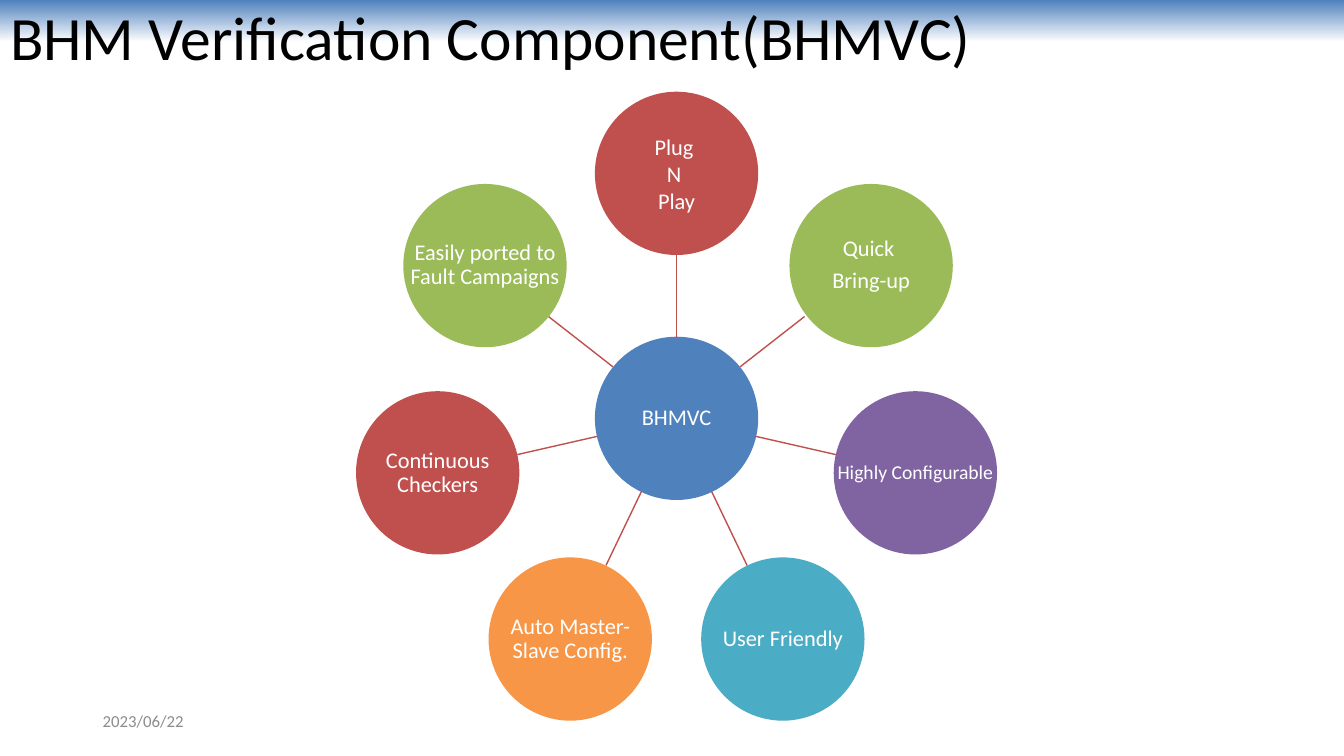
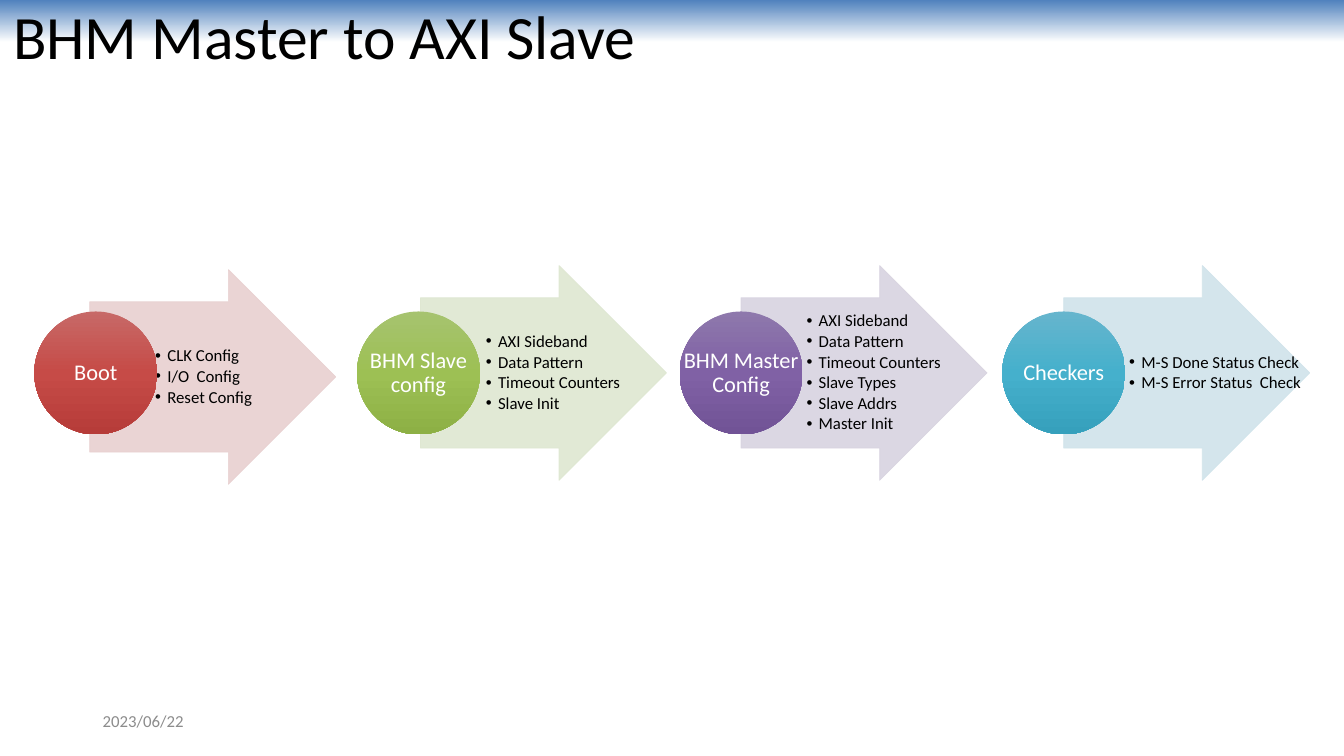
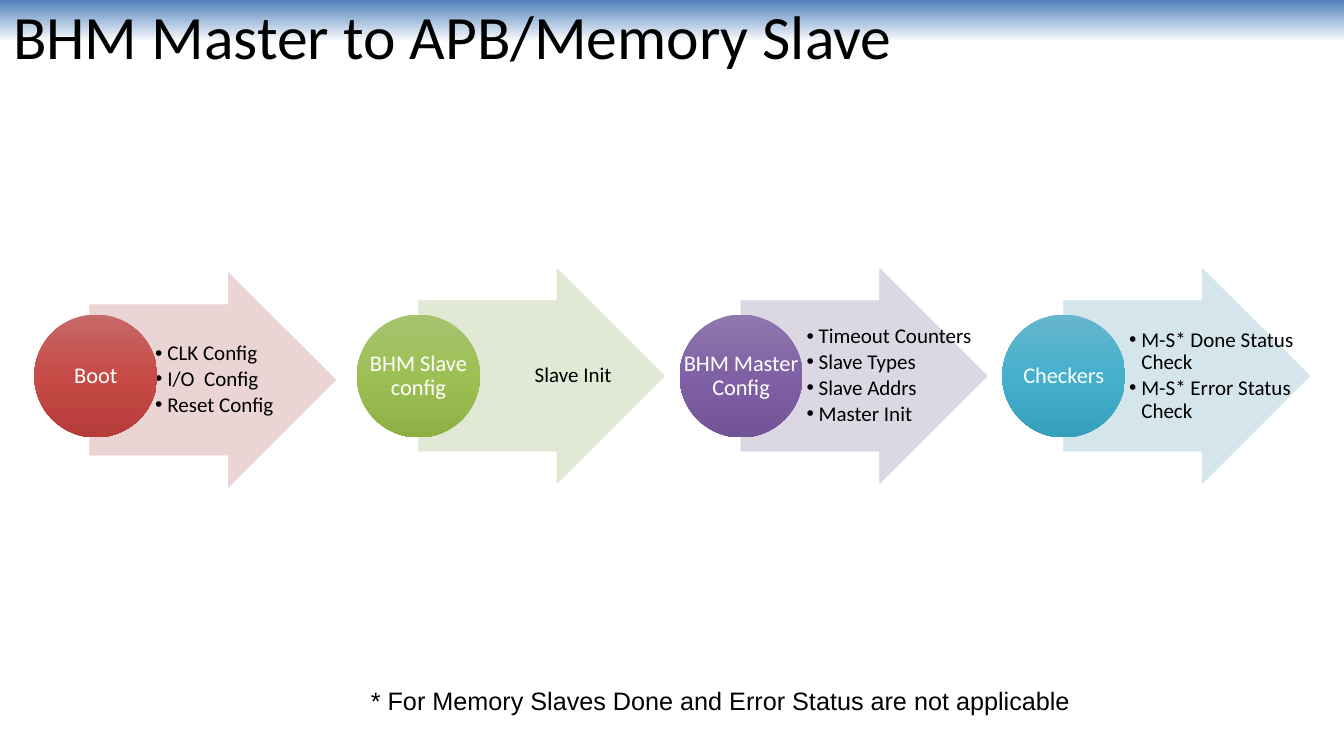
import math
from dataclasses import dataclass

from lxml import etree
from pptx import Presentation
from pptx.dml.color import RGBColor
from pptx.enum.shapes import MSO_CONNECTOR, MSO_SHAPE
from pptx.enum.text import MSO_ANCHOR, MSO_AUTO_SIZE, PP_ALIGN
from pptx.oxml.ns import qn
from pptx.shapes.autoshape import Shape
from pptx.slide import Slide
from pptx.util import Inches, Pt

RECTANGLE = MSO_SHAPE.RECTANGLE
ELLIPSE = MSO_SHAPE.OVAL
ARROW = MSO_SHAPE.RIGHT_ARROW
STRAIGHT = MSO_CONNECTOR.STRAIGHT
LEFT, CENTER = PP_ALIGN.LEFT, PP_ALIGN.CENTER
TOP, MIDDLE = MSO_ANCHOR.TOP, MSO_ANCHOR.MIDDLE


@dataclass(frozen=True)
class Theme:
    font: str = "Calibri"
    note_font: str = "Arial"
    black: str = "000000"
    white: str = "FFFFFF"
    gray: str = "8C8C8C"
    blue: str = "4F81BD"
    red: str = "C0504D"
    green: str = "9BBB59"
    purple: str = "8064A2"
    teal: str = "4BACC6"
    orange: str = "F79646"
    title_size: float = 44
    note_size: float = 18
    label_size: float = 16
    small_label_size: float = 14
    date_size: float = 12
    line_spacing: float = 0.9


THEME = Theme()
SLIDE_WIDTH, SLIDE_HEIGHT = 13.33, 7.5


@dataclass(frozen=True)
class Tone:
    """Disc gradient from top to bottom, and the pale arrow behind it."""
    disc: tuple[str, ...]
    arrow: str


STAGE_TONES = (
    Tone(("C76967", "C64B47", "B63C39"), "E8D0D0"),
    Tone(("A6C36F", "9DC054", "8DB045"), "DEE7D1"),
    Tone(("8E78AC", "8061A5", "715396"), "D8D3E0"),
    Tone(("66B5CD", "45B0CC", "36A0BC"), "D0E3EA"),
)


@dataclass(frozen=True)
class Spoke:
    lines: tuple[str, ...]
    color: str
    size: float = THEME.label_size
    line_spacing: float = THEME.line_spacing
    gap: float = 5.6
    nudge: float = 0


@dataclass(frozen=True)
class Stage:
    name: str
    details: tuple[str, ...]
    shift_x: float = 0
    shift_y: float = 0
    bulleted: bool = True


SPOKES = (
    Spoke(("Plug ", "N ", "Play"), THEME.red, line_spacing=1, gap=0),
    Spoke(("Quick ", "Bring-up"), THEME.green, nudge=0.03),
    Spoke(("Highly Configurable",), THEME.purple, size=THEME.small_label_size),
    Spoke(("User Friendly",), THEME.teal),
    Spoke(("Auto Master-Slave Config.",), THEME.orange),
    Spoke(("Continuous Checkers",), THEME.red),
    Spoke(("Easily ported to Fault Campaigns",), THEME.green),
)

BOOT = Stage("Boot", ("CLK Config", "I/O  Config", "Reset Config"), -0.06, 0.04)
AXI_STAGES = (
    BOOT,
    Stage("BHM Slave config",
          ("AXI Sideband", "Data Pattern", "Timeout Counters", "Slave Init"), 0.02),
    Stage("BHM Master Config",
          ("AXI Sideband", "Data Pattern", "Timeout Counters",
           "Slave Types", "Slave Addrs", "Master Init")),
    Stage("Checkers", ("M-S Done Status Check", "M-S Error Status  Check")),
)
APB_STAGES = (
    BOOT,
    Stage("BHM Slave config", ("Slave Init",), bulleted=False),
    Stage("BHM Master Config",
          ("Timeout Counters", "Slave Types", "Slave Addrs", "Master Init")),
    Stage("Checkers", ("M-S* Done Status Check", "M-S* Error Status  Check")),
)


def rgb(color: str) -> RGBColor:
    return RGBColor.from_string(color)


def add_bullet(para) -> None:
    properties = para._p.get_or_add_pPr()
    properties.set("marL", str(Inches(0.12)))
    properties.set("indent", str(-Inches(0.12)))
    etree.SubElement(properties, qn("a:buFont")).set("typeface", "Arial")
    etree.SubElement(properties, qn("a:buChar")).set("char", "•")


def write_text(box, lines: tuple[str, ...], *, size: float, color: str = THEME.black,
               font: str = THEME.font, align=LEFT, anchor=MIDDLE,
               line_spacing: float = 1, gap: float = 0, bulleted: bool = False,
               wrap: bool = True, insets: tuple[float, ...] = (0.1, 0.05, 0.1, 0.05)) -> None:
    """Fill a box with paragraphs; insets run left, top, right, bottom."""
    frame = box.text_frame
    frame.auto_size = MSO_AUTO_SIZE.NONE if wrap else MSO_AUTO_SIZE.SHAPE_TO_FIT_TEXT
    frame.word_wrap = wrap
    frame.vertical_anchor = anchor
    (frame.margin_left, frame.margin_top,
     frame.margin_right, frame.margin_bottom) = map(Inches, insets)
    for index, line in enumerate(lines):
        para = frame.add_paragraph() if index else frame.paragraphs[0]
        if bulleted:
            add_bullet(para)
        para.alignment = align
        para.line_spacing = line_spacing
        if index:
            para.space_before = Pt(gap)
        span = para.add_run()
        span.text = line
        span.font.name = font
        span.font.size = Pt(size)
        span.font.color.rgb = rgb(color)


def add_text(page: Slide, left: float, top: float, width: float, height: float,
             lines: tuple[str, ...], **text_format) -> None:
    box = page.shapes.add_textbox(*map(Inches, (left, top, width, height)))
    write_text(box, lines, **text_format)


def add_shape(page: Slide, kind, left: float, top: float, width: float, height: float,
              colors: tuple[str, ...]) -> Shape:
    """Draw an outline-free shape; several colours give a downward gradient."""
    shape = page.shapes.add_shape(kind, *map(Inches, (left, top, width, height)))
    shape.shadow.inherit = False
    shape.line.fill.background()
    if len(colors) == 1:
        shape.fill.solid()
        shape.fill.fore_color.rgb = rgb(colors[0])
        return shape
    shape.fill.gradient()
    shape.fill.gradient_angle = 270
    stops = shape._element.spPr.find(qn("a:gradFill")).find(qn("a:gsLst"))
    for stop in list(stops):
        stops.remove(stop)
    for index, color in enumerate(colors):
        stop = etree.SubElement(stops, qn("a:gs"))
        stop.set("pos", str(100000 * index // (len(colors) - 1)))
        etree.SubElement(stop, qn("a:srgbClr")).set("val", color)
    return shape


def add_disc(page: Slide, left: float, top: float, diameter: float,
             colors: tuple[str, ...], lines: tuple[str, ...], *,
             size: float = THEME.label_size,
             line_spacing: float = THEME.line_spacing, gap: float = 0) -> None:
    """Draw a circle whose label may use its full width."""
    add_shape(page, ELLIPSE, left, top, diameter, diameter, colors)
    add_text(page, left, top, diameter, diameter, lines, size=size, color=THEME.white,
             align=CENTER, line_spacing=line_spacing, gap=gap, insets=(0.01,) * 4)


def add_page(deck, title: str, left: float = 0.03, top: float = -0.01) -> Slide:
    page = deck.slides.add_slide(deck.slide_layouts.get_by_name("Title Only"))
    box = page.shapes.title
    box.left, box.top, box.width, box.height = map(Inches, (left, top, 11.5, 0.8))
    write_text(box, (title,), size=THEME.title_size, line_spacing=THEME.line_spacing)
    return page


def move_band_to_layout(page: Slide) -> None:
    """Draw the top band and hand it to the layout that all pages use."""
    band = add_shape(page, RECTANGLE, 0, 0, SLIDE_WIDTH, 0.42, (THEME.blue, THEME.white))
    page.slide_layout.shapes._spTree.insert(2, band._element)


def add_date(page: Slide) -> None:
    add_text(page, 0.92, 6.95, 3, 0.4, ("2023/06/22",), size=THEME.date_size,
             color=THEME.gray)


def draw_wheel(page: Slide) -> None:
    center_x, center_y = 6.71, 4.15
    diameter, reach = 1.62, 2.43
    radius = diameter / 2
    add_disc(page, center_x - radius, center_y - radius, diameter, (THEME.blue,), ("BHMVC",))
    for index, spoke in enumerate(SPOKES):
        angle = 2 * math.pi * index / len(SPOKES)
        across, down = math.sin(angle), -math.cos(angle)
        ends = [Inches(round(value, 2)) for distance in (radius, reach - radius)
                for value in (center_x + distance * across, center_y + distance * down)]
        line = page.shapes.add_connector(STRAIGHT, *ends)
        line.line.color.rgb = rgb(THEME.red)
        line.line.width = Pt(1)
        etree.SubElement(line._element.spPr, qn("a:effectLst"))
        add_disc(page, center_x + reach * across - radius + spoke.nudge,
                 center_y + reach * down - radius, diameter, (spoke.color,), spoke.lines,
                 size=spoke.size, line_spacing=spoke.line_spacing, gap=spoke.gap)


def add_stage_arrow(page: Slide, left: float, top: float, width: float, height: float,
                    color: str) -> None:
    arrow = add_shape(page, ARROW, left, top, width, height, (color,))
    arrow.adjustments[0] = 0.7
    arrow.adjustments[1] = 0.5
    arrow.line.color.rgb = rgb(color)
    arrow.line.width = Pt(0.5)
    for tint in arrow._element.spPr.iter(qn("a:srgbClr")):
        etree.SubElement(tint, qn("a:alpha")).set("val", "90000")


def draw_flow(page: Slide, stages: tuple[Stage, ...], disc_top: float, size: float) -> None:
    first_left, pitch, diameter = 0.34, 3.2, 1.22
    width, height = 2.44, 2.13
    for index, (stage, tone) in enumerate(zip(stages, STAGE_TONES)):
        disc_left = first_left + index * pitch
        arrow_left = disc_left + diameter / 2 + stage.shift_x
        arrow_top = disc_top + (diameter - height) / 2 + stage.shift_y
        add_stage_arrow(page, arrow_left, arrow_top, width, height, tone.arrow)
        add_text(page, arrow_left + width / 4, arrow_top, width * 3 / 4, height,
                 stage.details, size=size, align=LEFT if stage.bulleted else CENTER,
                 line_spacing=THEME.line_spacing, gap=0.15 * size,
                 bulleted=stage.bulleted, insets=(0.04, 0.01, 0.02, 0.01))
        add_disc(page, disc_left, disc_top, diameter, tone.disc, (stage.name,))


def main() -> None:
    deck = Presentation()
    deck.slide_width, deck.slide_height = Inches(SLIDE_WIDTH), Inches(SLIDE_HEIGHT)

    component = add_page(deck, "BHM Verification Component(BHMVC)", 0, 0)
    move_band_to_layout(component)
    add_date(component)
    draw_wheel(component)

    axi = add_page(deck, "BHM Master to AXI Slave")
    add_date(axi)
    draw_flow(axi, AXI_STAGES, disc_top=3.09, size=12)

    apb = add_page(deck, "BHM Master to APB/Memory Slave")
    draw_flow(apb, APB_STAGES, disc_top=3.12, size=15)
    add_text(apb, 3.58, 6.75, 7.2, 0.4,
             ("* For Memory Slaves Done and Error Status are not applicable",),
             size=THEME.note_size, font=THEME.note_font, anchor=TOP, wrap=False)

    deck.save("out.pptx")


if __name__ == "__main__":
    main()
